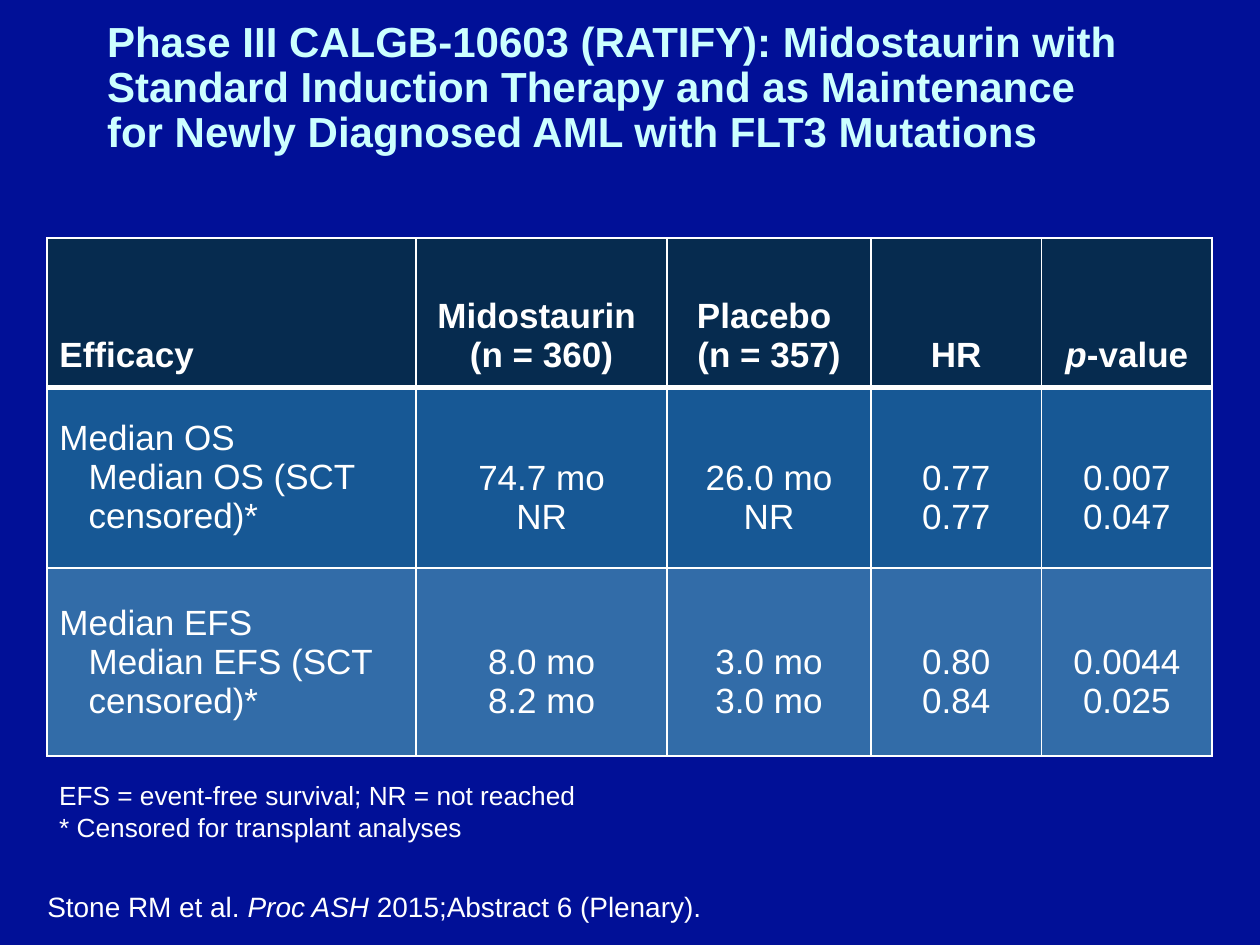
from lxml import etree
from pptx import Presentation
from pptx.dml.color import RGBColor
from pptx.enum import text as t
from pptx.oxml import ns
from pptx.util import Pt

NAVY = RGBColor(0x01, 0x10, 0x97)
PALE = RGBColor(0xCC, 0xFF, 0xFF)
WHITE = RGBColor(0xFF, 0xFF, 0xFF)
FILLS = [RGBColor(0x06, 0x2B, 0x4F), RGBColor(0x17, 0x58, 0x95),
         RGBColor(0x32, 0x6C, 0xA8)]

# Content: _x_ marks italics, \v a line break
TITLE = ("Phase III CALGB-10603 (RATIFY): Midostaurin with Standard Induction "
         "Therapy and as Maintenance \vfor Newly Diagnosed AML with FLT3 Mutations")
HEAD = ["Efficacy", "Midostaurin \v(n = 360)", "Placebo \v(n = 357)",
        "HR", "_p_-value"]
BODY = [
    [("Median OS", "Median OS (SCT \vcensored)*"), ("74.7 mo", "NR"),
     ("26.0 mo", "NR"), ("0.77", "0.77"), ("0.007", "0.047")],
    [("Median EFS", "Median EFS (SCT \vcensored)*"), ("8.0 mo", "8.2 mo"),
     ("3.0 mo", "3.0 mo"), ("0.80", "0.84"), ("0.0044", "0.025")],
]
NOTES = ["EFS = event-free survival; NR = not reached",
         "* Censored for transplant analyses"]
CITE = ["Stone RM et al. _Proc ASH_ 2015;Abstract 6 (Plenary)."]

# Layout in points
COLS = [211, 143.5, 116.5, 97.5, 97.5]
ROWS = [85.5, 103, 107.5]
PAD, LINE, INDENT = 7.2, 22.5, 16.7


def write(frame, lines, size, color=WHITE, bold=False, align=t.PP_ALIGN.LEFT):
    for i, line in enumerate(lines):
        para = frame.paragraphs[0] if i == 0 else frame.add_paragraph()
        para.alignment = align
        for k, part in enumerate(line.split("_")):
            for j, piece in enumerate(part.split("\v")):
                if j:
                    para.add_line_break()
                if not piece:
                    continue
                run = para.add_run()
                run.text = piece
                form = {"name": "Arial", "size": Pt(size), "bold": bold,
                        "italic": k % 2 == 1}
                for key, val in form.items():
                    setattr(run.font, key, val)
                run.font.color.rgb = color


def note(slide, box, lines, size):
    frame = slide.shapes.add_textbox(*map(Pt, box)).text_frame
    frame.word_wrap = True
    write(frame, lines, size)


def edge(cell, side, width):
    line = etree.SubElement(cell._tc.get_or_add_tcPr(), ns.qn("a:ln" + side),
                            w=str(Pt(width)))
    fill = etree.SubElement(line, ns.qn("a:solidFill"))
    etree.SubElement(fill, ns.qn("a:srgbClr"), val=str(WHITE))


def fill_cell(cell, row, col, item):
    head = row == 0
    lines = [item] if head else item
    # Values sit one line lower, beside the second label line
    drop = 0 if head or col == 0 else LINE
    form = {"margin_left": Pt(PAD), "margin_right": Pt(PAD),
            "margin_top": Pt(PAD + drop), "margin_bottom": Pt(PAD),
            "vertical_anchor": t.MSO_ANCHOR.BOTTOM if head else t.MSO_ANCHOR.MIDDLE}
    for key, val in form.items():
        setattr(cell, key, val)
    for side in "LRTB":
        thick = (row, side) in [(0, "B"), (1, "T")]
        edge(cell, side, 3 if thick else 1)
    cell.fill.solid()
    cell.fill.fore_color.rgb = FILLS[row]
    align = t.PP_ALIGN.CENTER if col else t.PP_ALIGN.LEFT
    write(cell.text_frame, lines, 20, bold=head, align=align)
    if not head and col == 0:
        props = cell.text_frame.paragraphs[1]._p.get_or_add_pPr()
        props.set("marL", str(Pt(INDENT)))
        props.set("indent", "0")


def main():
    prs = Presentation()
    prs.slide_width, prs.slide_height = Pt(720), Pt(540)
    slide = prs.slides.add_slide(prs.slide_layouts[5])
    slide.background.fill.solid()
    slide.background.fill.fore_color.rgb = NAVY

    # Title
    title = slide.shapes.title
    place = {"left": 54, "top": 0, "width": 634.5, "height": 101.5}
    for key, val in place.items():
        setattr(title, key, Pt(val))
    frame = title.text_frame
    frame.word_wrap = True
    frame.auto_size = t.MSO_AUTO_SIZE.NONE
    frame.vertical_anchor = t.MSO_ANCHOR.MIDDLE
    write(frame, [TITLE], 24, PALE, bold=True)
    frame.paragraphs[0].line_spacing = 0.9

    # Efficacy table
    table = slide.shapes.add_table(
        len(ROWS), len(COLS), Pt(26.75), Pt(136),
        Pt(sum(COLS)), Pt(sum(ROWS))).table
    for col, width in zip(table.columns, COLS):
        col.width = Pt(width)
    for row, height in zip(table.rows, ROWS):
        row.height = Pt(height)
    for r, row in enumerate([HEAD] + BODY):
        for c, item in enumerate(row):
            fill_cell(table.cell(r, c), r, c, item)

    # Footnotes and citation
    note(slide, (26.75, 442, 540, 44), NOTES, 15)
    note(slide, (20, 505, 700, 26.5), CITE, 16)
    prs.save("out.pptx")


if __name__ == "__main__":
    main()
